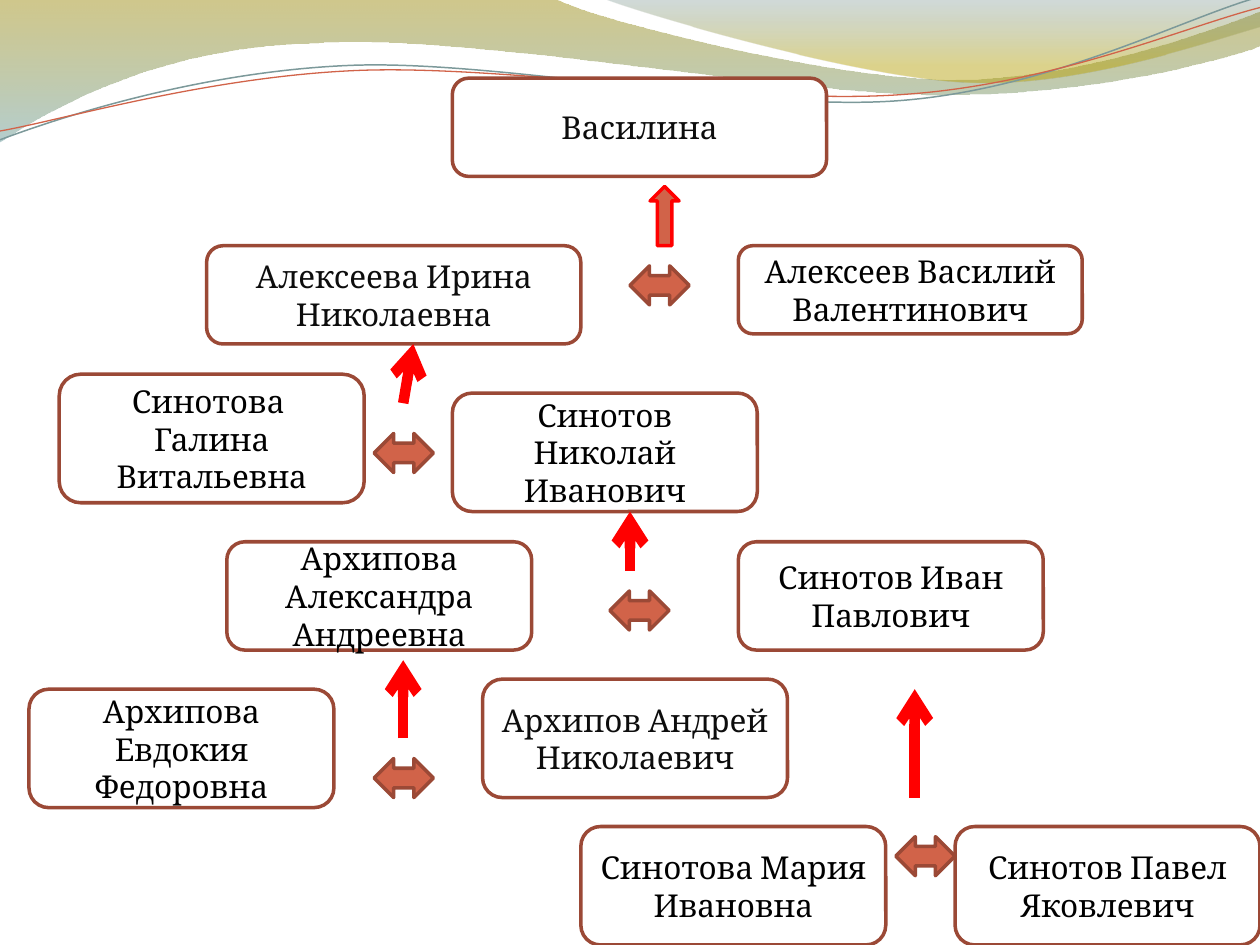
from lxml.etree import Element, SubElement
from pptx import Presentation
from pptx.dml.color import RGBColor
from pptx.enum.shapes import MSO_CONNECTOR, MSO_SHAPE
from pptx.enum.text import MSO_ANCHOR, PP_ALIGN
from pptx.oxml.ns import qn
from pptx.util import Inches, Pt

COLORS = {
    "paper": "FFFFFF", "ink": "000000", "soft_ink": "0D0D0D",
    "border": "9B4936", "rust": "D16349", "red": "FF0000", "slate": "7C999A",
    "olive": "978500", "teal": "77A5A6", "grey": "648484", "gold": "B49F00",
}
FONT = "Cambria"

# Outlines: a start point, then line ends (x, y) or cubic curves (x1, y1, x2, y2, x, y)
LEFT_WAVE = [
    (0, 0), (4.4, -0.01), (4.76, 0.17, 6.64, 0.63, 7.58, 0.63),
    (8.53, 0.63, 9.58, 0.26, 10, 0.09), (10.01, 0.36),
    (9.83, 0.44, 8.7, 0.76, 7.46, 0.75), (6.22, 0.75, 3.82, 0.28, 2.57, 0.34),
    (1.29, 0.36, 0.46, 0.83, -0.01, 1.13),
]
RIGHT_WAVE = [
    (4.79, -0.01), (5.09, 0.11, 6.82, 0.62, 7.69, 0.65),
    (8.56, 0.69, 9.61, 0.32, 10, 0.21), (10, 0),
]
SLATE_CURVE = [
    (0, 1.11), (0.48, 0.93, 1.58, 0.57, 2.77, 0.52),
    (3.95, 0.47, 5.93, 0.89, 7.13, 0.8), (8.33, 0.71, 9.38, 0.15, 9.98, -0.02),
]
RUST_CURVE = [
    (0, 1.04), (0.47, 0.96, 1.64, 0.61, 2.83, 0.56),
    (4.03, 0.51, 5.97, 0.84, 7.17, 0.75), (8.36, 0.67, 9.41, 0.21, 10, 0.06),
]

PERSON_W, PERSON_H = 2.42, 0.94
PEOPLE = [  # name, left, top, width, height, text colour
    ("Алексеева Ирина Николаевна", 1.64, 1.95, 2.97, 0.78, "soft_ink"),
    ("Алексеев Василий Валентинович", 5.86, 1.95, 2.73, 0.7, "ink"),
    ("Синотова  Галина Витальевна", 0.47, 2.97, PERSON_W, 1.02, "ink"),
    ("Синотов Николай Иванович", 3.59, 3.12, PERSON_W, PERSON_H, "ink"),
    ("Архипова Александра Андреевна", 1.8, 4.3, PERSON_W, 0.86, "ink"),
    ("Синотов Иван Павлович", 5.86, 4.3, PERSON_W, 0.86, "ink"),
    ("Архипова Евдокия Федоровна", 0.23, 5.47, PERSON_W, PERSON_H, "ink"),
    ("Архипов Андрей Николаевич", 3.83, 5.39, PERSON_W, PERSON_H, "soft_ink"),
    ("Синотова Мария Ивановна", 4.61, 6.56, PERSON_W, PERSON_H, "ink"),
    ("Синотов Павел Яковлевич", 7.58, 6.56, PERSON_W, PERSON_H, "ink"),
    ("Василина", 3.59, 0.62, 2.97, 0.78, "soft_ink"),
]
MARRIAGES = [(2.97, 3.44), (4.84, 4.69), (2.97, 6.02), (7.11, 6.64), (5, 2.11)]
DESCENTS = [
    (7.26, 6.33, 7.26, 5.47), (3.2, 5.86, 3.2, 5.24),
    (5, 4.53, 5, 4.06), (3.2, 3.2, 3.28, 2.73),
]


def rgb(name):
    return RGBColor.from_string(COLORS[name])


def bend(sp, segments):
    """Turn the straight segments that have control points into cubic curves."""
    lines = list(sp._element.iter(qn("a:lnTo")))
    for line, segment in zip(lines, segments):
        if len(segment) == 2:
            continue
        curve = Element(qn("a:cubicBezTo"))
        for x, y in zip(segment[::2], segment[1::2]):
            SubElement(curve, qn("a:pt"), x=str(Inches(x) - sp.left),
                       y=str(Inches(y) - sp.top))
        line.getparent().replace(line, curve)


class FamilyTree:
    def __init__(self, slide):
        self.s = slide

    def outline(self, segments, close):
        points = [(Inches(seg[-2]), Inches(seg[-1])) for seg in segments]
        builder = self.s.shapes.build_freeform(*points[0])
        builder.add_line_segments(points[1:], close=False)
        if close:
            builder.add_line_segments([], close=True)
        sp = builder.convert_to_shape()
        bend(sp, segments[1:])
        sp.shadow.inherit = False
        return sp

    def wave(self, segments, stops):
        """Add a filled wave; stops are (position, colour, opacity percent)."""
        sp = self.outline(segments, True)
        sp.line.fill.background()
        sp.fill.gradient()
        sp.fill.gradient_angle = 270
        for stop, (position, color, opacity) in zip(sp.fill.gradient_stops, stops):
            stop.position = position
            stop.color.rgb = rgb(color)
            for clr in stop.color._xFill.iter(qn("a:srgbClr")):
                SubElement(clr, qn("a:alpha"), val=str(opacity * 1000))

    def curve(self, segments, color, width):
        sp = self.outline(segments, False)
        sp.fill.background()
        self.stroke(sp, color, width)

    def stroke(self, sp, color, width):
        sp.line.color.rgb = rgb(color)
        sp.line.width = Pt(width)

    def shape(self, kind, left, top, width, height, fill, line):
        sp = self.s.shapes.add_shape(
            kind, Inches(left), Inches(top), Inches(width), Inches(height))
        sp.shadow.inherit = False
        sp.fill.solid()
        sp.fill.fore_color.rgb = rgb(fill)
        self.stroke(sp, line, 2)
        return sp

    def person(self, name, left, top, width, height, color):
        sp = self.shape(MSO_SHAPE.ROUNDED_RECTANGLE, left, top, width, height,
                        "paper", "border")
        tf = sp.text_frame
        tf.word_wrap = True
        tf.vertical_anchor = MSO_ANCHOR.MIDDLE
        p = tf.paragraphs[0]
        p.alignment = PP_ALIGN.CENTER
        r = p.add_run()
        r.text = name
        r.font.name = FONT
        r.font.size = Pt(18)
        r.font.color.rgb = rgb(color)

    def marriage(self, left, top):
        self.shape(MSO_SHAPE.LEFT_RIGHT_ARROW, left, top, 0.47, 0.31, "rust", "border")

    def descent(self, x1, y1, x2, y2):
        cx = self.s.shapes.add_connector(
            MSO_CONNECTOR.STRAIGHT, Inches(x1), Inches(y1), Inches(x2), Inches(y2))
        self.stroke(cx, "red", 6)
        SubElement(cx.line._get_or_add_ln(), qn("a:tailEnd"), type="arrow")
        SubElement(cx._element.spPr, qn("a:effectLst"))


def main():
    prs = Presentation()
    prs.slide_width, prs.slide_height = Inches(10), Inches(7.5)
    tree = FamilyTree(prs.slides.add_slide(prs.slide_layouts[6]))

    tree.wave(LEFT_WAVE, [(0, "olive", 45), (1, "teal", 55)])
    tree.wave(RIGHT_WAVE, [(0, "grey", 30), (0.8, "gold", 45)])
    tree.curve(SLATE_CURVE, "slate", 0.85)
    tree.curve(RUST_CURVE, "rust", 0.75)

    for person in PEOPLE:
        tree.person(*person)
    for place in MARRIAGES:
        tree.marriage(*place)
    for ends in DESCENTS:
        tree.descent(*ends)
    tree.shape(MSO_SHAPE.UP_ARROW, 5.16, 1.48, 0.23, 0.47, "rust", "red")

    prs.save("out.pptx")


if __name__ == "__main__":
    main()
